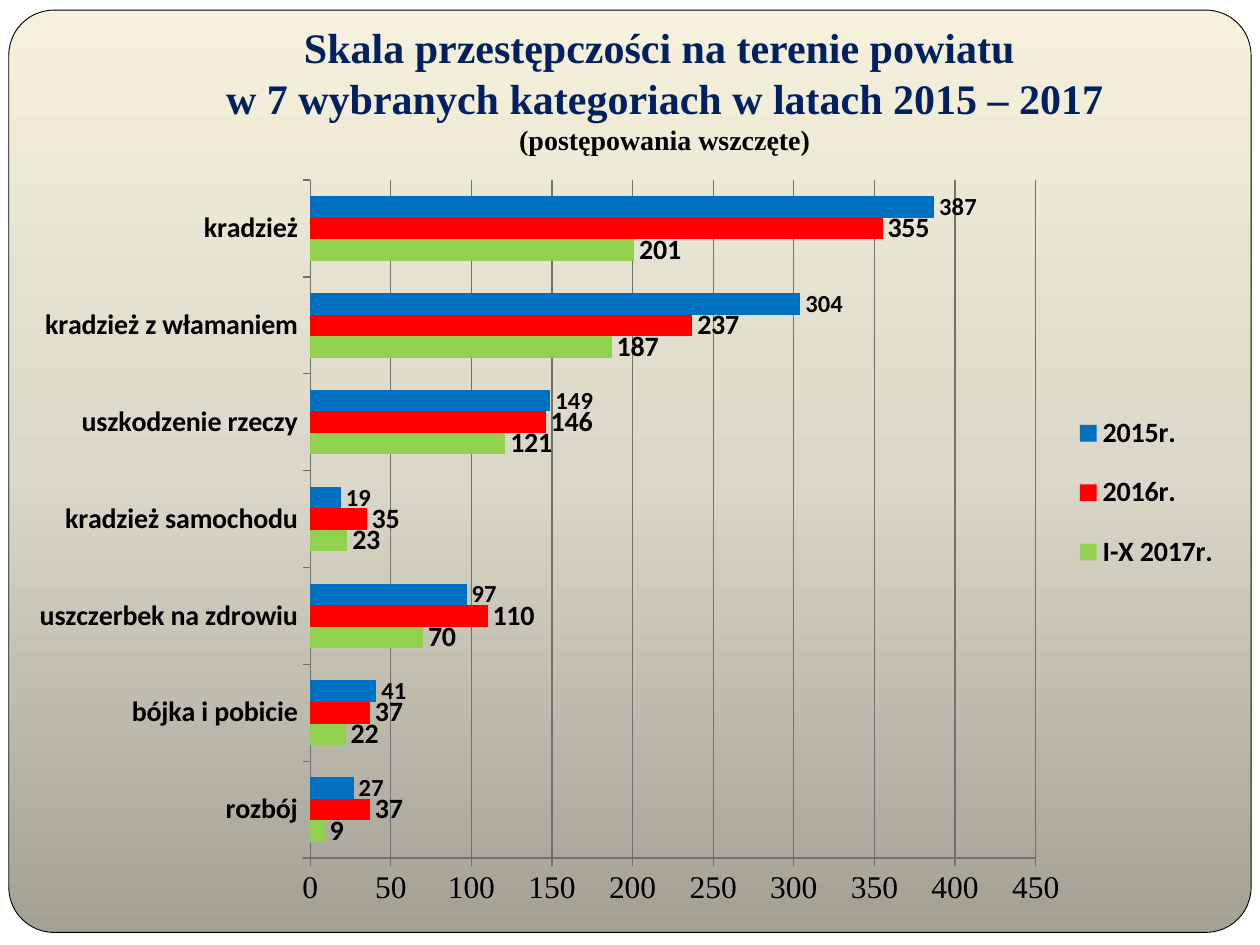
from copy import deepcopy

from lxml import etree
from pptx import Presentation
from pptx.chart.data import CategoryChartData
from pptx.dml.color import RGBColor
from pptx.enum.chart import XL_CHART_TYPE as ChartType
from pptx.enum.chart import XL_LABEL_POSITION as LabelPosition
from pptx.enum.chart import XL_LEGEND_POSITION as LegendPosition
from pptx.enum.chart import XL_TICK_MARK as TickMark
from pptx.enum.shapes import MSO_SHAPE as Shape
from pptx.enum.text import MSO_ANCHOR as Anchor
from pptx.enum.text import PP_ALIGN as Align
from pptx.oxml.ns import qn
from pptx.util import Inches, Pt

BLACK = RGBColor(0x00, 0x00, 0x00)
NAVY = RGBColor(0x00, 0x20, 0x60)
GREY = RGBColor(0x70, 0x70, 0x70)
GREEN = RGBColor(0x92, 0xD0, 0x50)
RED = RGBColor(0xFF, 0x00, 0x00)
BLUE = RGBColor(0x00, 0x70, 0xC0)
PANEL_STOPS = [
    (0, RGBColor(0xA3, 0xA0, 0x94)),
    (0.5, RGBColor(0xDB, 0xD8, 0xC9)),
    (1, RGBColor(0xF5, 0xF1, 0xDC)),
]

SERIF, SANS = "Times New Roman", "Calibri"

TITLE = [
    ("Skala przestępczości na terenie powiatu ", 24, NAVY),
    ("w 7 wybranych kategoriach w latach 2015 – 2017", 24, NAVY),
    ("(postępowania wszczęte)", 16, BLACK),
]
CATEGORIES = [
    "rozbój", "bójka i pobicie", "uszczerbek na zdrowiu", "kradzież samochodu",
    "uszkodzenie rzeczy", "kradzież z włamaniem", "kradzież",
]
# name, values, bar colour, label size
SERIES = [
    ("I-X 2017r.", (9, 22, 70, 23, 121, 187, 201), GREEN, 16),
    ("2016r.", (37, 37, 110, 35, 146, 237, 355), RED, 16),
    ("2015r.", (27, 41, 97, 19, 149, 304, 387), BLUE, 14),
]


def style_font(font, name, size, color=BLACK, bold=True):
    font.name = name
    font.size = Pt(size)
    font.bold = bold
    font.color.rgb = color


def add_panel(page):
    panel = page.shapes.add_shape(
        Shape.ROUNDED_RECTANGLE,
        Inches(0.07), Inches(0.08), Inches(9.86), Inches(7.32))
    panel.adjustments[0] = 0.049
    panel.shadow.inherit = False
    panel.line.color.rgb = BLACK
    panel.line.width = Pt(0.5)
    panel.fill.gradient()
    panel.fill.gradient_angle = 90
    stop_list = next(panel._element.iter(qn("a:gsLst")))
    stop_list.append(deepcopy(stop_list[-1]))
    for stop, (position, color) in zip(panel.fill.gradient_stops, PANEL_STOPS):
        stop.position = position
        stop.color.rgb = color


def add_title(page):
    box = page.shapes.add_textbox(
        Inches(1.22), Inches(0.28), Inches(8.11), Inches(1.34))
    frame = box.text_frame
    frame.word_wrap = True
    frame.vertical_anchor = Anchor.BOTTOM
    frame.margin_bottom = Inches(0.38)
    frame.text = "\n".join(text for text, _, _ in TITLE)
    for para, (_, size, color) in zip(frame.paragraphs, TITLE):
        para.alignment = Align.CENTER
        style_font(para.runs[0].font, SERIF, size, color)


def place(element, index, x, y, w, h, inner=False):
    """Give a chart part a fixed place, in fractions of the chart."""
    for old in element.findall(qn("c:layout")):
        element.remove(old)
    layout = etree.Element(qn("c:layout"))
    manual = etree.SubElement(layout, qn("c:manualLayout"))
    settings = [("layoutTarget", "inner")] if inner else []
    settings += [("xMode", "edge"), ("yMode", "edge"),
                 ("x", x), ("y", y), ("w", w), ("h", h)]
    for tag, value in settings:
        etree.SubElement(manual, qn(f"c:{tag}")).set("val", str(value))
    element.insert(index, layout)


def format_axes(chart):
    for axis in (chart.category_axis, chart.value_axis):
        axis.major_tick_mark = TickMark.OUTSIDE
        axis.minor_tick_mark = TickMark.NONE
        axis.format.line.color.rgb = GREY
    style_font(chart.category_axis.tick_labels.font, SANS, 16)
    values = chart.value_axis
    style_font(values.tick_labels.font, SERIF, 18, bold=False)
    values.minimum_scale, values.maximum_scale, values.major_unit = 0, 450, 50
    values.has_major_gridlines = True
    values.major_gridlines.format.line.color.rgb = GREY


def format_series(plot):
    plot.gap_width = 150
    plot.overlap = 0
    plot.vary_by_categories = False
    for series, (_, _, color, size) in zip(plot.series, SERIES):
        series.format.fill.solid()
        series.format.fill.fore_color.rgb = color
        labels = series.data_labels
        labels.show_value = True
        labels.position = LabelPosition.OUTSIDE_END
        style_font(labels.font, SANS, size)


def add_crime_chart(page):
    data = CategoryChartData()
    data.categories = CATEGORIES
    for name, values, _, _ in SERIES:
        data.add_series(name, values)
    chart = page.shapes.add_chart(
        ChartType.BAR_CLUSTERED,
        Inches(0.12), Inches(1.31), Inches(9.76), Inches(5.98), data).chart
    chart.has_title = False
    style_font(chart.font, SERIF, 18, bold=False)
    format_axes(chart)
    format_series(chart.plots[0])
    chart.has_legend = True
    legend = chart.legend
    legend.position = LegendPosition.RIGHT
    legend.include_in_layout = False
    style_font(legend.font, SANS, 16)
    place(legend._element, 1, 0.85, 0.3, 0.14, 0.27)
    plot_area = next(chart._chartSpace.iter(qn("c:plotArea")))
    place(plot_area, 0, 0.24, 0.02, 0.59, 0.9, inner=True)


def main():
    deck = Presentation()
    deck.slide_width, deck.slide_height = Inches(10), Inches(7.5)
    page = deck.slides.add_slide(deck.slide_layouts[6])
    add_panel(page)
    add_title(page)
    add_crime_chart(page)
    deck.save("out.pptx")


if __name__ == "__main__":
    main()
